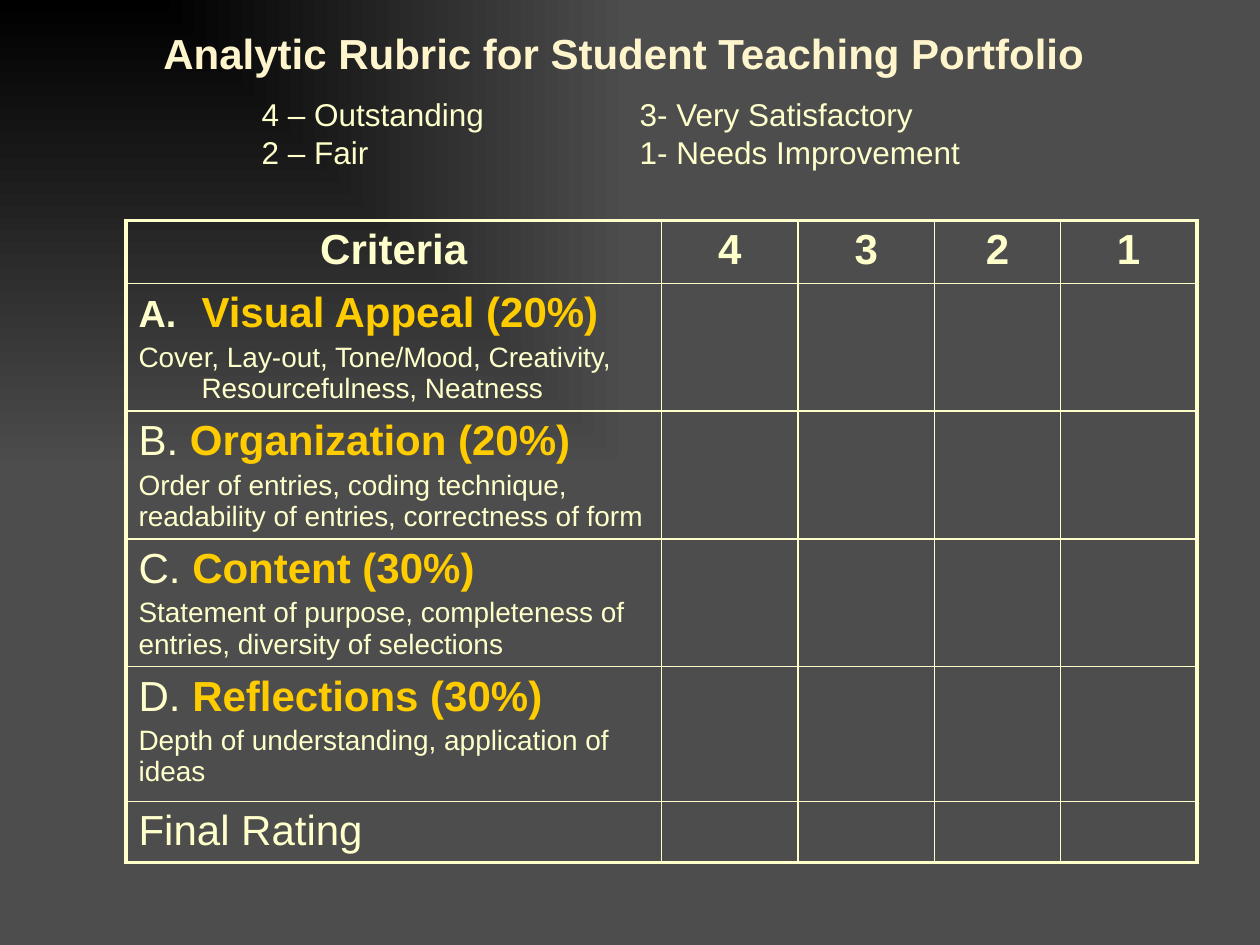
from dataclasses import dataclass

from pptx import Presentation
from pptx.dml.color import RGBColor
from pptx.enum.text import MSO_ANCHOR, MSO_AUTO_SIZE, PP_ALIGN
from pptx.oxml.ns import qn
from pptx.oxml.xmlchemy import OxmlElement
from pptx.util import Pt

CENTER = PP_ALIGN.CENTER
TOP = MSO_ANCHOR.TOP
NO_FIT = MSO_AUTO_SIZE.NONE

BLACK = RGBColor(0x00, 0x00, 0x00)
GRAY = RGBColor(0x4D, 0x4D, 0x4D)
CREAM = RGBColor(0xFF, 0xFF, 0xCC)
TITLE_CREAM = RGBColor(0xFF, 0xF5, 0xCC)
GOLD = RGBColor(0xFF, 0xCC, 0x00)
FONT = "Arial"

COLUMN_WIDTHS = (306, 78, 78, 72, 78)
ROW_HEIGHTS = (36, 73, 73, 73, 77, 35)
OUTER_LINE, INNER_LINE = 2.25, 1
HANGING = Pt(36)


@dataclass(frozen=True)
class Criterion:
    letter: str
    name: str
    details: str
    numbered: bool = False


HEADINGS = ("Criteria", "4", "3", "2", "1")
CRITERIA = (
    Criterion("A", "Visual Appeal (20%)",
              "Cover, Lay-out, Tone/Mood, Creativity, Resourcefulness, Neatness", True),
    Criterion("B", "Organization (20%)",
              "Order of entries, coding technique, readability of entries, correctness of form"),
    Criterion("C", "Content (30%)",
              "Statement of purpose, completeness of entries, diversity of selections"),
    Criterion("D", "Reflections (30%)",
              "Depth of understanding, application of ideas"),
)
RATINGS = (
    ("4 – Outstanding", "3- Very Satisfactory"),
    ("2 – Fair", "1- Needs Improvement"),
)
RATING_TABS = (72, 288)


def add_child(parent, tag: str, **attributes):
    child = OxmlElement(tag)
    for name, value in attributes.items():
        child.set(name, str(value))
    parent.append(child)
    return child


def set_font(paragraph, size: float, color: RGBColor, bold: bool = False) -> None:
    font = paragraph.font
    font.name, font.size, font.bold = FONT, Pt(size), bold
    font.color.rgb = color


def paint_background(slide) -> None:
    fill = slide.background.fill
    fill.gradient()
    for stop, color in zip(fill.gradient_stops, (BLACK, GRAY)):
        stop.color.rgb = color
    gradient = slide._element.find(".//" + qn("a:gradFill"))
    gradient.remove(gradient.find(qn("a:lin")))
    corner = add_child(gradient, "a:path", path="rect")
    add_child(corner, "a:fillToRect", r=100000, b=100000)


def add_title(slide, text: str) -> None:
    title = slide.shapes.title
    title.left, title.top, title.width, title.height = Pt(85.5), Pt(12.25), Pt(542), Pt(36)
    frame = title.text_frame
    frame.text = text
    frame.word_wrap = False
    frame.auto_size = NO_FIT
    frame.vertical_anchor = TOP
    paragraph = frame.paragraphs[0]
    paragraph.alignment = CENTER
    set_font(paragraph, 24, TITLE_CREAM, True)


def add_ratings(slide) -> None:
    frame = slide.shapes.add_textbox(Pt(70.5), Pt(51), Pt(518), Pt(50)).text_frame
    frame.word_wrap = False
    frame.text = "\n".join("\t" + "\t".join(pair) for pair in RATINGS)
    for paragraph in frame.paragraphs:
        tabs = add_child(paragraph._p.get_or_add_pPr(), "a:tabLst")
        for position in RATING_TABS:
            add_child(tabs, "a:tab", pos=Pt(position), algn="l")
        set_font(paragraph, 18, CREAM)


def add_borders(cell, row: int, column: int) -> None:
    edges = {
        "a:lnL": column == 0,
        "a:lnR": column == len(COLUMN_WIDTHS) - 1,
        "a:lnT": row == 0,
        "a:lnB": row == len(ROW_HEIGHTS) - 1,
    }
    properties = cell._tc.get_or_add_tcPr()
    for tag, outer in edges.items():
        line = add_child(properties, tag, w=Pt(OUTER_LINE if outer else INNER_LINE))
        add_child(add_child(line, "a:solidFill"), "a:srgbClr", val=CREAM)


def hang(paragraph):
    properties = paragraph._p.get_or_add_pPr()
    properties.set("marL", str(HANGING))
    properties.set("indent", str(-HANGING))
    return properties


def write_criterion(cell, criterion: Criterion) -> None:
    heading = cell.text_frame.paragraphs[0]
    details = cell.text_frame.add_paragraph()
    if criterion.numbered:
        hang(details)
        numbering = hang(heading)
        add_child(add_child(numbering, "a:buClr"), "a:srgbClr", val=CREAM)
        add_child(numbering, "a:buSzPct", val=90000)
        add_child(numbering, "a:buAutoNum", type="alphaUcPeriod")
    else:
        heading.add_run().text = f"{criterion.letter}. "
    set_font(heading, 24, CREAM)
    name = heading.add_run()
    name.text = criterion.name
    name.font.bold = True
    name.font.color.rgb = GOLD
    details.text = criterion.details
    details.space_before = Pt(3.2)
    set_font(details, 16, CREAM)


def add_rubric(slide) -> None:
    rubric = slide.shapes.add_table(
        len(ROW_HEIGHTS), len(COLUMN_WIDTHS), Pt(72), Pt(126),
        Pt(sum(COLUMN_WIDTHS)), Pt(sum(ROW_HEIGHTS))).table
    rubric.first_row = rubric.horz_banding = False
    for column, width in zip(rubric.columns, COLUMN_WIDTHS):
        column.width = Pt(width)
    for r, height in enumerate(ROW_HEIGHTS):
        rubric.rows[r].height = Pt(height)
        for c in range(len(COLUMN_WIDTHS)):
            cell = rubric.cell(r, c)
            add_borders(cell, r, c)
            cell.fill.background()
    for c, text in enumerate(HEADINGS):
        heading = rubric.cell(0, c).text_frame.paragraphs[0]
        heading.text = text
        heading.alignment = CENTER
        set_font(heading, 24, CREAM, True)
    for r, criterion in enumerate(CRITERIA, start=1):
        write_criterion(rubric.cell(r, 0), criterion)
    final = rubric.cell(len(ROW_HEIGHTS) - 1, 0).text_frame.paragraphs[0]
    final.text = "Final Rating"
    set_font(final, 24, CREAM)


def main() -> None:
    deck = Presentation()
    deck.slide_width, deck.slide_height = Pt(720), Pt(540)
    slide = deck.slides.add_slide(deck.slide_layouts[5])
    paint_background(slide)
    add_rubric(slide)
    add_ratings(slide)
    add_title(slide, "Analytic Rubric for Student Teaching Portfolio")
    deck.save("out.pptx")


if __name__ == "__main__":
    main()
